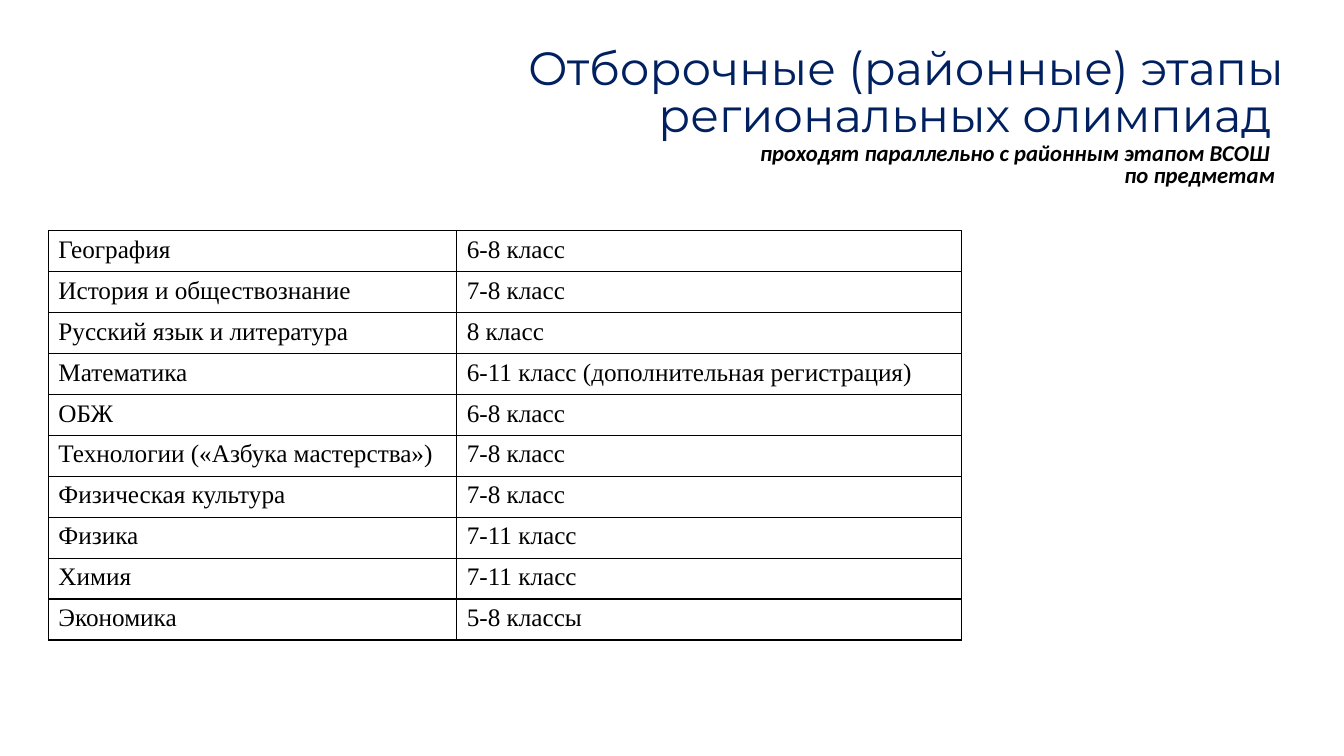
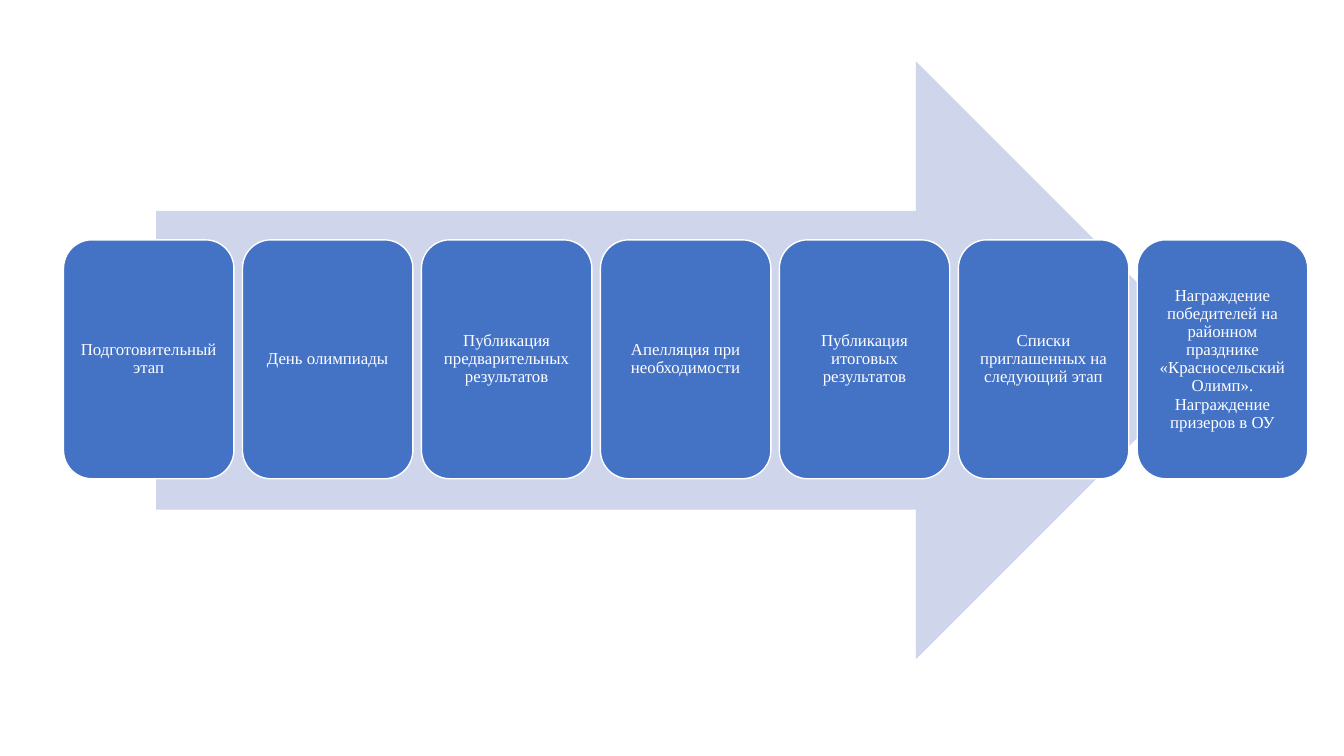
from dataclasses import dataclass

import lxml.etree
import pptx
import pptx.dml.color
import pptx.enum.shapes
import pptx.enum.text
import pptx.oxml.ns
import pptx.presentation
import pptx.shapes.autoshape
import pptx.slide
import pptx.table
import pptx.text.text
import pptx.util

Inches = pptx.util.Inches
Pt = pptx.util.Pt
Align = pptx.enum.text.PP_ALIGN
Shape = pptx.enum.shapes.MSO_SHAPE


@dataclass(frozen=True)
class TextStyle:
    font: str
    size: float
    color: str
    bold: bool = False
    italic: bool = False


@dataclass(frozen=True)
class Theme:
    title: TextStyle = TextStyle("Montserrat", 33.3, "002060")
    subtitle: TextStyle = TextStyle("Calibri", 16.2, "000000", True, True)
    cell: TextStyle = TextStyle("Times New Roman", 18, "000000")
    stage: TextStyle = TextStyle("Times New Roman", 12, "FFFFFF")
    border: str = "000000"
    arrow: str = "CFD5EA"
    card: str = "4472C4"
    card_line: str = "FFFFFF"
    line_width: float = 1


@dataclass(frozen=True)
class Box:
    left: float
    top: float
    width: float
    height: float

    def lengths(self) -> tuple[int, int, int, int]:
        return (Inches(self.left), Inches(self.top),
                Inches(self.width), Inches(self.height))


@dataclass(frozen=True)
class Subject:
    name: str
    grades: str


THEME = Theme()

SUBJECTS = [
    Subject("География", "6-8 класс"),
    Subject("История и обществознание", "7-8 класс"),
    Subject("Русский язык и литература", "8 класс"),
    Subject("Математика", "6-11 класс (дополнительная регистрация)"),
    Subject("ОБЖ", "6-8 класс"),
    Subject("Технологии («Азбука мастерства»)", "7-8 класс"),
    Subject("Физическая культура", "7-8 класс"),
    Subject("Физика", "7-11 класс"),
    Subject("Химия", "7-11 класс"),
    Subject("Экономика", "5-8 классы"),
]

STAGES = [
    "Подготовительный этап",
    "День олимпиады",
    "Публикация предварительных результатов",
    "Апелляция при необходимости",
    "Публикация итоговых результатов",
    "Списки приглашенных на следующий этап",
    "Награждение победителей на районном празднике "
    "«Красносельский Олимп». Награждение призеров в ОУ",
]


def rgb(color: str) -> pptx.dml.color.RGBColor:
    return pptx.dml.color.RGBColor.from_string(color)


def write(frame: pptx.text.text.TextFrame, lines: list[str], style: TextStyle,
          align: Align, spacing: float | pptx.util.Length = 1.0) -> None:
    frame.word_wrap = True
    for index, line in enumerate(lines):
        para = frame.add_paragraph() if index else frame.paragraphs[0]
        para.text = line
        para.alignment = align
        para.line_spacing = spacing
        para.font.name = style.font
        para.font.size = Pt(style.size)
        para.font.bold = style.bold
        para.font.italic = style.italic
        para.font.color.rgb = rgb(style.color)


def set_insets(frame: pptx.text.text.TextFrame, inset: float) -> None:
    frame.margin_left = frame.margin_right = Inches(inset)
    frame.margin_top = frame.margin_bottom = Inches(inset)


def add_shape(page: pptx.slide.Slide, kind: Shape, box: Box,
              fill: str) -> pptx.shapes.autoshape.Shape:
    shape = page.shapes.add_shape(kind, *box.lengths())
    shape.shadow.inherit = False
    shape.fill.solid()
    shape.fill.fore_color.rgb = rgb(fill)
    shape.line.fill.background()
    return shape


def frame_cell(cell: pptx.table._Cell) -> None:
    qn = pptx.oxml.ns.qn
    properties = cell._tc.get_or_add_tcPr()
    for side in ("lnL", "lnR", "lnT", "lnB"):
        line = lxml.etree.SubElement(properties, qn(f"a:{side}"),
                                     w=str(Pt(THEME.line_width)))
        fill = lxml.etree.SubElement(line, qn("a:solidFill"))
        lxml.etree.SubElement(fill, qn("a:srgbClr"), val=THEME.border)
    cell.fill.background()


def add_subject_table(page: pptx.slide.Slide, box: Box,
                      column_widths: tuple[float, ...]) -> None:
    table = page.shapes.add_table(len(SUBJECTS), len(column_widths),
                                  *box.lengths()).table
    table.first_row = False
    table.horz_banding = False
    for column, width in zip(table.columns, column_widths):
        column.width = Inches(width)
    for row, subject in zip(table.rows, SUBJECTS):
        for cell, text in zip(row.cells, (subject.name, subject.grades)):
            write(cell.text_frame, [text], THEME.cell, Align.LEFT)
            frame_cell(cell)


def build_subjects(page: pptx.slide.Slide) -> None:
    subtitle = page.shapes.add_textbox(*Box(5.52, 1.38, 7.22, 0.59).lengths())
    write(subtitle.text_frame,
          ["проходят параллельно с районным этапом ВСОШ ", "по предметам"],
          THEME.subtitle, Align.RIGHT, 0.8)
    title = page.shapes.add_textbox(*Box(3.67, 0.48, 9.07, 0.93).lengths())
    set_insets(title.text_frame, 0)
    write(title.text_frame,
          ["Отборочные (районные) этапы региональных олимпиад "],
          THEME.title, Align.RIGHT, Pt(THEME.title.size))
    add_subject_table(page, Box(0.48, 2.29, 9.06, 4.06), (4.05, 5.01))


def build_stages(page: pptx.slide.Slide) -> None:
    add_shape(page, Shape.RIGHT_ARROW, Box(1.55, 0.61, 10.5, 5.93), THEME.arrow)
    first_left, last_left = 0.63, 11.28
    step = (last_left - first_left) / (len(STAGES) - 1)
    for index, stage in enumerate(STAGES):
        box = Box(first_left + index * step, 2.38, 1.69, 2.37)
        card = add_shape(page, Shape.ROUNDED_RECTANGLE, box, THEME.card)
        card.line.color.rgb = rgb(THEME.card_line)
        card.line.width = Pt(THEME.line_width)
        frame = card.text_frame
        frame.vertical_anchor = pptx.enum.text.MSO_ANCHOR.MIDDLE
        set_insets(frame, 0.05)
        write(frame, [stage], THEME.stage, Align.CENTER, 0.9)


def main() -> None:
    deck = pptx.Presentation()
    deck.slide_width = Inches(13.33)
    deck.slide_height = Inches(7.5)
    for build in (build_subjects, build_stages):
        build(deck.slides.add_slide(deck.slide_layouts[6]))
    deck.save("out.pptx")


if __name__ == "__main__":
    main()
